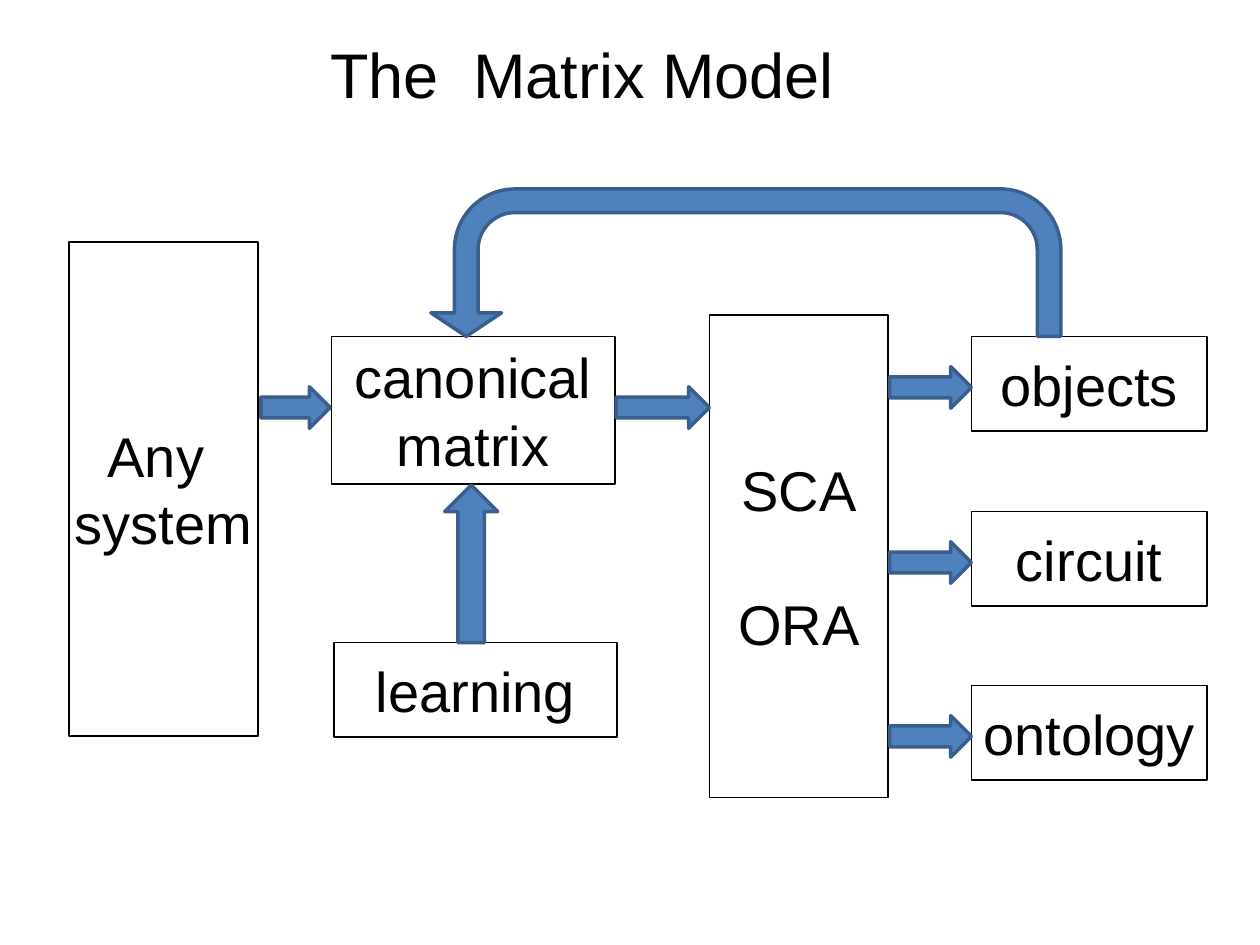
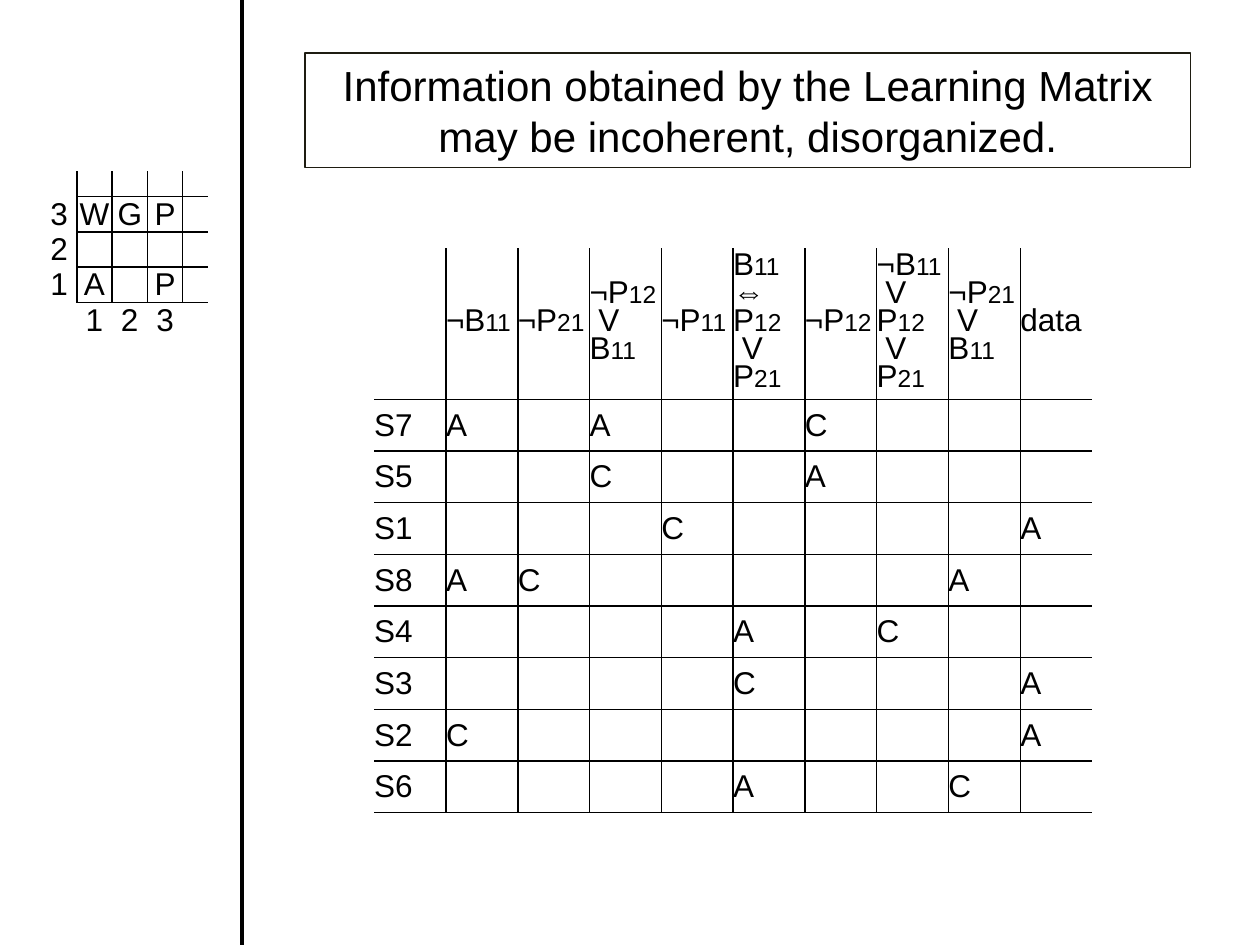
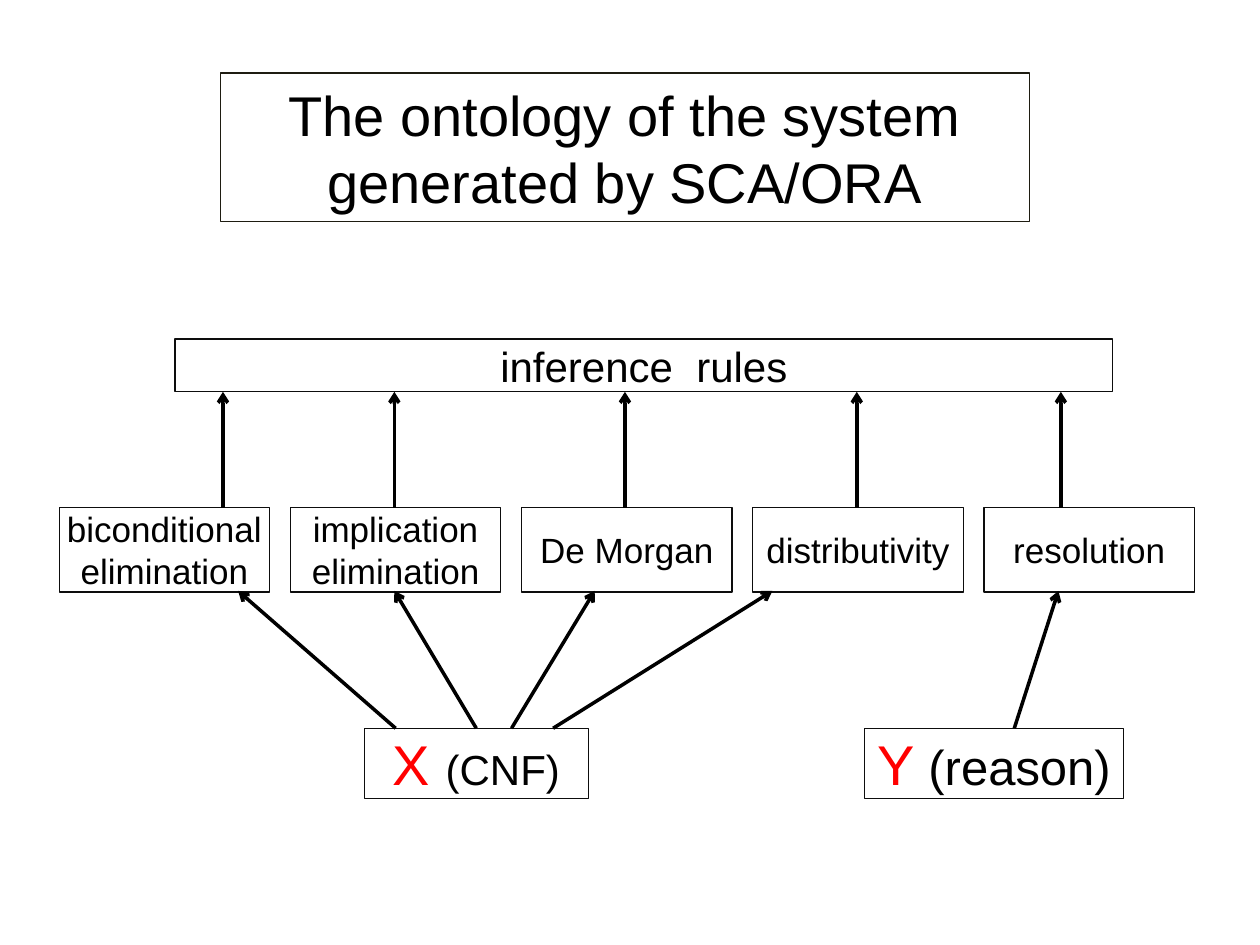
from itertools import groupby
from lxml.etree import SubElement
from pptx import Presentation
from pptx.dml.color import RGBColor
from pptx.enum.shapes import MSO_CONNECTOR, MSO_SHAPE
from pptx.enum.text import MSO_ANCHOR, MSO_AUTO_SIZE, PP_ALIGN
from pptx.oxml import parse_xml
from pptx.oxml.ns import nsdecls, qn
from pptx.util import Inches, Pt

BLACK = RGBColor(0x00, 0x00, 0x00)
COAL = RGBColor(0x0D, 0x0D, 0x0D)
BROWN = RGBColor(0x1E, 0x1C, 0x11)
RED = RGBColor(0xFF, 0x00, 0x00)
BLUE = RGBColor(0x4F, 0x81, 0xBD)
NAVY = RGBColor(0x3A, 0x5F, 0x8C)
FONT = "Arial"
MARGINS = dict.fromkeys(("margin_left", "margin_right", "margin_top", "margin_bottom"), 0)
BODY = {**MARGINS, "word_wrap": True, "vertical_anchor": MSO_ANCHOR.MIDDLE}
HEAD = {"word_wrap": True, "vertical_anchor": MSO_ANCHOR.MIDDLE, "auto_size": MSO_AUTO_SIZE.NONE}
CELL = {**MARGINS, "vertical_anchor": MSO_ANCHOR.MIDDLE}
PLAIN = {"first_row": False, "horz_banding": False}


def assign(item, values):
    for name, value in values.items():
        setattr(item, name, value)


def place(at):
    return [Inches(value) for value in at]


class Deck:
    def __init__(self):
        self.prs = Presentation()
        assign(self.prs, {"slide_width": Inches(10), "slide_height": Inches(7.5)})
        self.slide = None

    def page(self, title, at, size, edge=None):
        self.slide = self.prs.slides.add_slide(self.prs.slide_layouts[5])
        shape = self.slide.shapes.title
        assign(shape, dict(zip(("left", "top", "width", "height"), place(at))))
        assign(shape.text_frame, HEAD)
        self.label(shape.text_frame, [title], size)
        if edge is not None:
            self.stroke(shape.line, edge, 0.75)

    def stroke(self, line, color, width):
        line.color.rgb = color
        line.width = Pt(width)

    def label(self, frame, lines, size, **look):
        look = {"alignment": PP_ALIGN.CENTER, **look}
        for i, line in enumerate(lines):
            para = frame.add_paragraph() if i else frame.paragraphs[0]
            assign(para, look)
            parts = [(line, size, BLACK)] if isinstance(line, str) else line
            for text, points, color in parts:
                run = para.add_run()
                run.text = text
                assign(run.font, {"name": FONT, "size": Pt(points)})
                run.font.color.rgb = color

    def shape(self, kind, at, edge, width):
        shape = self.slide.shapes.add_shape(kind, *place(at))
        shape.shadow.inherit = False
        self.stroke(shape.line, edge, width)
        return shape

    def box(self, at, lines, size, edge=BLACK, width=1):
        shape = self.shape(MSO_SHAPE.RECTANGLE, at, edge, width)
        shape.fill.background()
        assign(shape.text_frame, BODY)
        self.label(shape.text_frame, lines, size)
        return shape

    def block(self, kind, at):
        shape = self.shape(kind, at, NAVY, 2)
        shape.fill.solid()
        shape.fill.fore_color.rgb = BLUE
        return shape

    def line(self, start, end, head=False):
        line = self.slide.shapes.add_connector(MSO_CONNECTOR.STRAIGHT, *place(start + end))
        self.stroke(line.line, BLACK, 2)
        props = line.element.spPr
        if head:
            SubElement(props.find(qn("a:ln")), qn("a:tailEnd"), type="arrow")
        SubElement(props, qn("a:effectLst"))

    def border(self, cell, edges):
        props = cell._tc.get_or_add_tcPr()
        for i, (side, shown) in enumerate(edges.items()):
            paint = f'<a:solidFill><a:srgbClr val="{BLACK}"/></a:solidFill>' if shown else "<a:noFill/>"
            props.insert(i, parse_xml(f'<a:ln{side} {nsdecls("a")} w="12700">{paint}</a:ln{side}>'))

    def table(self, at, cols, rows, data, upright, level, align):
        size = (sum(cols), sum(rows))
        table = self.slide.shapes.add_table(len(rows), len(cols), *place(at + size)).table
        assign(table, PLAIN)
        for col, width in zip(table.columns, cols):
            col.width = Inches(width)
        for r, height in enumerate(rows):
            table.rows[r].height = Inches(height)
            for c in range(len(cols)):
                cell = table.cell(r, c)
                assign(cell, CELL)
                cell.fill.background()
                self.border(cell, {
                    "L": c > 0 and upright(r, c - 1),
                    "R": upright(r, c),
                    "T": r > 0 and level(r - 1, c),
                    "B": level(r, c),
                })
                lines = data.get((r, c))
                if lines:
                    look = {} if isinstance(lines[0], str) else {"line_spacing": Pt(16)}
                    self.label(cell.text_frame, lines, 18, alignment=align, **look)
                else:
                    para = cell.text_frame.paragraphs[0]._p
                    SubElement(para, qn("a:endParaRPr"), sz="1000")


def clause(text):
    return [
        [("".join(part), 14 if low else 18, BLACK) for low, part in groupby(line, str.isdigit)]
        for line in text.split("|")
    ]


def model(deck):
    deck.page("The  Matrix Model", (1.83, 0.17, 5.58, 0.83), 36)
    deck.box((0.55, 1.92, 1.5, 3.92), ["Any ", "system"], 32)
    deck.box((2.63, 2.67, 2.25, 1.17), ["canonical", "matrix"], 32)
    deck.box((2.65, 5.1, 2.25, 0.75), ["learning"], 32)
    tall = deck.box((5.63, 2.5, 1.42, 3.83), ["SCA", "ORA"], 32)
    tall.text_frame.paragraphs[1].space_before = Pt(38)
    for name, top in (("objects", 2.67), ("circuit", 4.06), ("ontology", 5.44)):
        deck.box((7.71, top, 1.87, 0.75), [name], 32)
        deck.block(MSO_SHAPE.RIGHT_ARROW, (7.06, top + 0.24, 0.65, 0.33))
    for left, width in ((2.07, 0.55), (4.89, 0.74)):
        deck.block(MSO_SHAPE.RIGHT_ARROW, (left, 3.07, width, 0.33))
    deck.block(MSO_SHAPE.UP_ARROW, (3.53, 3.85, 0.42, 1.25))
    turn = deck.block(MSO_SHAPE.U_TURN_ARROW, (3.42, 1.5, 5, 1.17))
    for i, value in enumerate((0.16, 0.24, 0.16, 0.41, 1)):
        turn.adjustments[i] = value
    turn.element.spPr.find(qn("a:xfrm")).set("flipH", "1")


def matrix(deck):
    deck.page("Information obtained by the Learning Matrix may be incoherent, disorganized.",
              (2.42, 0.42, 7.03, 0.91), 24, BROWN)
    heads = ("¬B11", "¬P21", "¬P12| V|B11", "¬P11", "B11|⇔|P12| V|P21",
             "¬P12", "¬B11| V|P12| V|P21", "¬P21| V|B11", "data")
    marks = {
        "S7": {1: "A", 3: "A", 6: "C"},
        "S5": {3: "C", 6: "A"},
        "S1": {4: "C", 9: "A"},
        "S8": {1: "A", 2: "C", 8: "A"},
        "S4": {5: "A", 7: "C"},
        "S3": {5: "C", 9: "A"},
        "S2": {1: "C", 9: "A"},
        "S6": {5: "A", 8: "C"},
    }
    data = {(0, c): clause(text) for c, text in enumerate(heads, 1)}
    for r, (name, row) in enumerate(marks.items(), 1):
        data.update({(r, c): [text] for c, text in {0: name, **row}.items()})
    deck.table((2.97, 1.97), [0.57] * 10, [1.2] + [0.41] * 8, data,
               lambda r, c: c < 9, lambda r, c: True, PP_ALIGN.LEFT)
    world = ("", "3WGP", "2", "1A P", " 123")
    data = {(r, c): [text] for r, row in enumerate(world) for c, text in enumerate(row) if text != " "}
    deck.table((0.33, 1.36), [0.28] * 4 + [0.2], [0.2] + [0.28] * 4, data,
               lambda r, c: r < 4 and c < 4, lambda r, c: r < 4 and c > 0, PP_ALIGN.CENTER)
    deck.line((1.92, 0), (1.92, 7.5))


def rules(deck):
    deck.page("The ontology of the system generated by SCA/ORA", (1.75, 0.58, 6.42, 1.18), 32, BROWN)
    deck.box((1.39, 2.69, 7.44, 0.42), ["inference  rules"], 24, COAL, 0.75)
    names = (["biconditional", "elimination"], ["implication", "elimination"],
             ["De Morgan"], ["distributivity"], ["resolution"])
    for i, (lines, x) in enumerate(zip(names, (1.77, 3.13, 4.96, 6.8, 8.42))):
        deck.box((0.47 + 7.34 * i / 4, 4.03, 1.67, 0.67), lines, 20, COAL, 0.75)
        deck.line((x, 4.03), (x, 3.11), True)
    deck.box((6.86, 5.78, 2.06, 0.56), [[("Y", 32, RED), (" (reason)", 28, BLACK)]], 32, COAL, 0.75)
    deck.box((2.89, 5.78, 1.78, 0.56), [[("X ", 32, RED), ("(CNF)", 24, BLACK)]], 32, COAL, 0.75)
    for low, high in ((3.14, 1.89), (3.78, 3.13), (4.06, 4.72), (4.39, 6.13), (8.05, 8.4)):
        deck.line((low, 5.78), (high, 4.69), True)


def main():
    deck = Deck()
    for build in (model, matrix, rules):
        build(deck)
    deck.prs.save("out.pptx")


if __name__ == "__main__":
    main()
